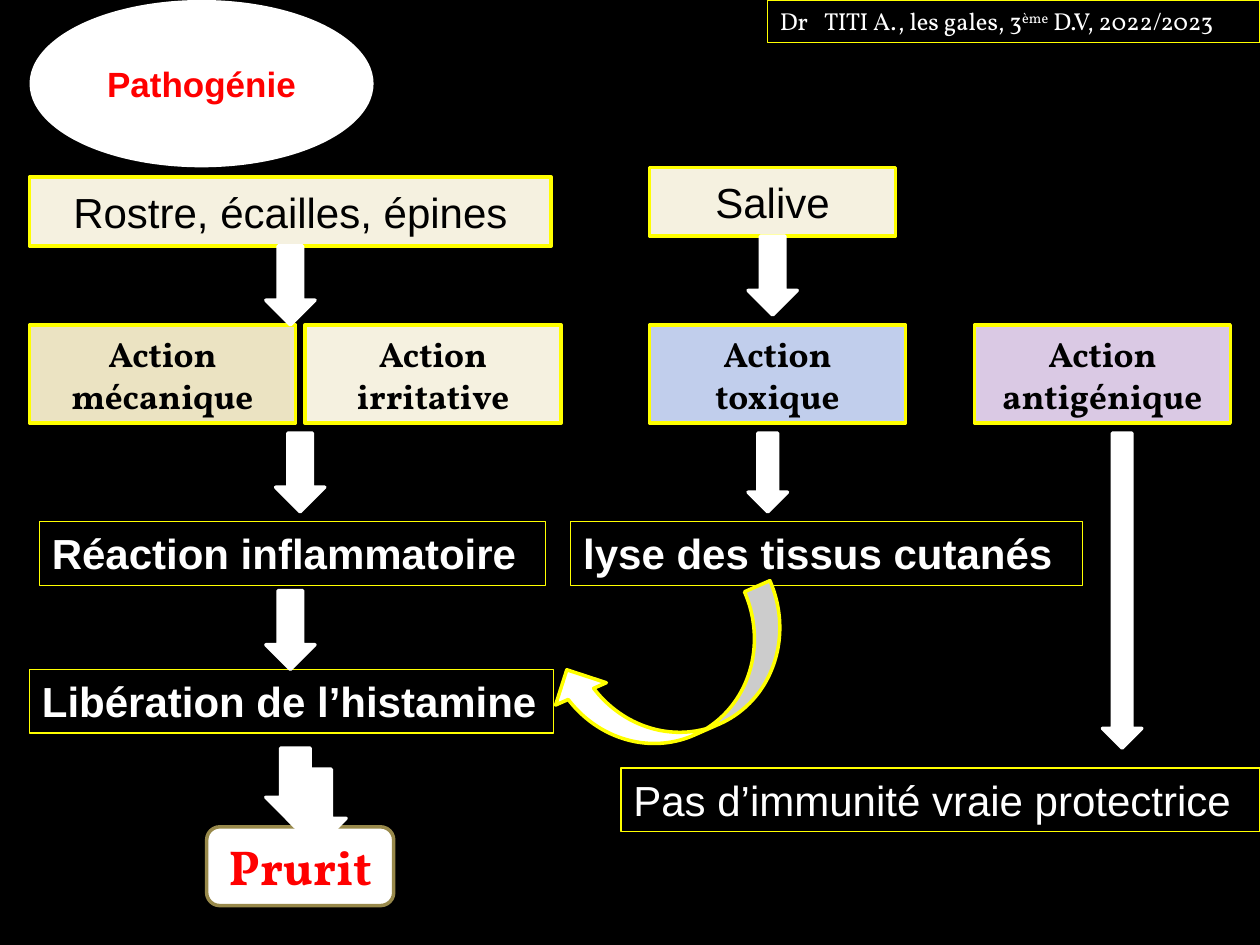
from pptx import Presentation
from pptx.dml.color import RGBColor
from pptx.enum import shapes, text
from pptx.util import Pt

SHAPE = shapes.MSO_SHAPE
WHITE, BLACK, RED, YELLOW, CREAM = "FFFFFF", "000000", "FF0000", "FFFF00", "F5F1E0"
SANS, SERIF = "Arial", "Vollkorn"


def colour(value):
    return RGBColor.from_string(value)


class Board:
    """Style of the diagram and the slide it is drawn on."""

    def __init__(self, slide):
        self.slide = slide
        slide.background.fill.solid()
        slide.background.fill.fore_color.rgb = colour(BLACK)

    def shape(self, kind, box, fill=None, line=None, weight=2):
        shape = self.slide.shapes.add_shape(kind, *(Pt(length) for length in box))
        shape.shadow.inherit = False
        if fill:
            shape.fill.solid()
            shape.fill.fore_color.rgb = colour(fill)
        else:
            shape.fill.background()
        if line:
            shape.line.color.rgb = colour(line)
            shape.line.width = Pt(weight)
        else:
            shape.line.fill.background()
        return shape

    def add_text(self, shape, lines, size, font, ink, bold=False, centred=True):
        """Each line is a list of (text, run attributes) pairs."""
        frame = shape.text_frame
        frame.word_wrap = True
        middle, top = text.MSO_ANCHOR.MIDDLE, text.MSO_ANCHOR.TOP
        frame.vertical_anchor = middle if centred else top
        for index, runs in enumerate(lines):
            paragraph = frame.add_paragraph() if index else frame.paragraphs[0]
            paragraph.alignment = text.PP_ALIGN.CENTER if centred else text.PP_ALIGN.LEFT
            for words, attributes in runs:
                run = paragraph.add_run()
                run.text = words
                run.font.size, run.font.name, run.font.bold = Pt(size), font, bold
                run.font.color.rgb = colour(ink)
                for name, value in attributes.items():
                    run.font._element.set(name, value)

    def block(self, kind, box, lines, fill, line, size, font, ink=BLACK, bold=False):
        shape = self.shape(kind, box, fill, line)
        self.add_text(shape, [[(words, {})] for words in lines], size, font, ink, bold)

    def label(self, box, runs, size=24, font=SANS, bold=False):
        shape = self.shape(SHAPE.RECTANGLE, box, line=YELLOW, weight=0.75)
        self.add_text(shape, [runs], size, font, WHITE, bold, centred=False)

    def arrow(self, left, top, width=28.1, height=45):
        self.shape(SHAPE.DOWN_ARROW, (left, top, width, height), WHITE, WHITE)

    def curved_arrow(self, box, angle):
        shape = self.shape(SHAPE.CURVED_LEFT_ARROW, box, WHITE, YELLOW)
        shape.rotation = angle


def main():
    presentation = Presentation()
    presentation.slide_width, presentation.slide_height = Pt(720), Pt(540)
    board = Board(presentation.slides.add_slide(presentation.slide_layouts[6]))

    # Title
    board.block(SHAPE.OVAL, (16.9, 0, 196.6, 95.6), ["Pathogénie"],
                WHITE, None, 20, SANS, RED, True)

    # Actions of the parasite
    actions = [
        (16.9, 151.9, "EBE3C2", ["Action mécanique"]),
        (174.4, 146.2, CREAM, ["Action", "irritative"]),
        (371.2, 146.2, "C1CEEC", ["Action", "toxique"]),
        (556.9, 146.2, "DAC9E4", ["Action", "antigénique"]),
    ]
    for left, width, fill, lines in actions:
        board.block(SHAPE.RECTANGLE, (left, 185.6, width, 56.2), lines,
                    fill, YELLOW, 20, SERIF, bold=True)

    # Causes
    for box, cause in [((16.9, 101.2, 298.1, 39.4), "Rostre, écailles, épines"),
                       ((371.2, 95.6, 140.6, 39.4), "Salive")]:
        board.block(SHAPE.RECTANGLE, box, [cause], CREAM, YELLOW, 24, SANS)

    # Effects
    effects = [
        (22.5, 298.1, 289.4, "Réaction inflammatoire", True),
        (16.9, 382.5, 299.5, "Libération de l’histamine", True),
        (326.2, 298.1, 292.3, "lyse des tissus cutanés", True),
        (354.8, 438.8, 365.2, "Pas d’immunité vraie protectrice", False),
    ]
    for left, top, width, words, bold in effects:
        board.label((left, top, width, 36.3), [(words, {})], bold=bold)

    # Outcome
    board.block(SHAPE.ROUNDED_RECTANGLE, (118.1, 472.5, 106.9, 45), ["Prurit"],
                WHITE, "98894B", 28, SERIF, RED, True)

    # Arrows from step to step
    for left, top in [(151.9, 140.6), (157.5, 247.5), (151.9, 337.5), (427.5, 135)]:
        board.arrow(left, top)
    for left, top in [(151.9, 427.5), (164, 439.5)]:
        board.arrow(left, top, width=33.8)
    board.arrow(427.5, 247.5, width=22.5)
    board.arrow(630, 247.5, width=22.5, height=180)
    board.curved_arrow((355.7, 318.2, 63.4, 142.6), 66.3)

    # Course reference, with a wide gap after the title "Dr"
    reference = [("Dr", {}), (" ", {"spc": "640"}), ("TITI A., les gales, 3", {}),
                 ("ème", {"baseline": "30000"}), (" D.V, 2022/2023", {})]
    board.label((438.5, 0, 281.5, 24.2), reference, size=14, font=SERIF)

    presentation.save("out.pptx")


if __name__ == "__main__":
    main()
